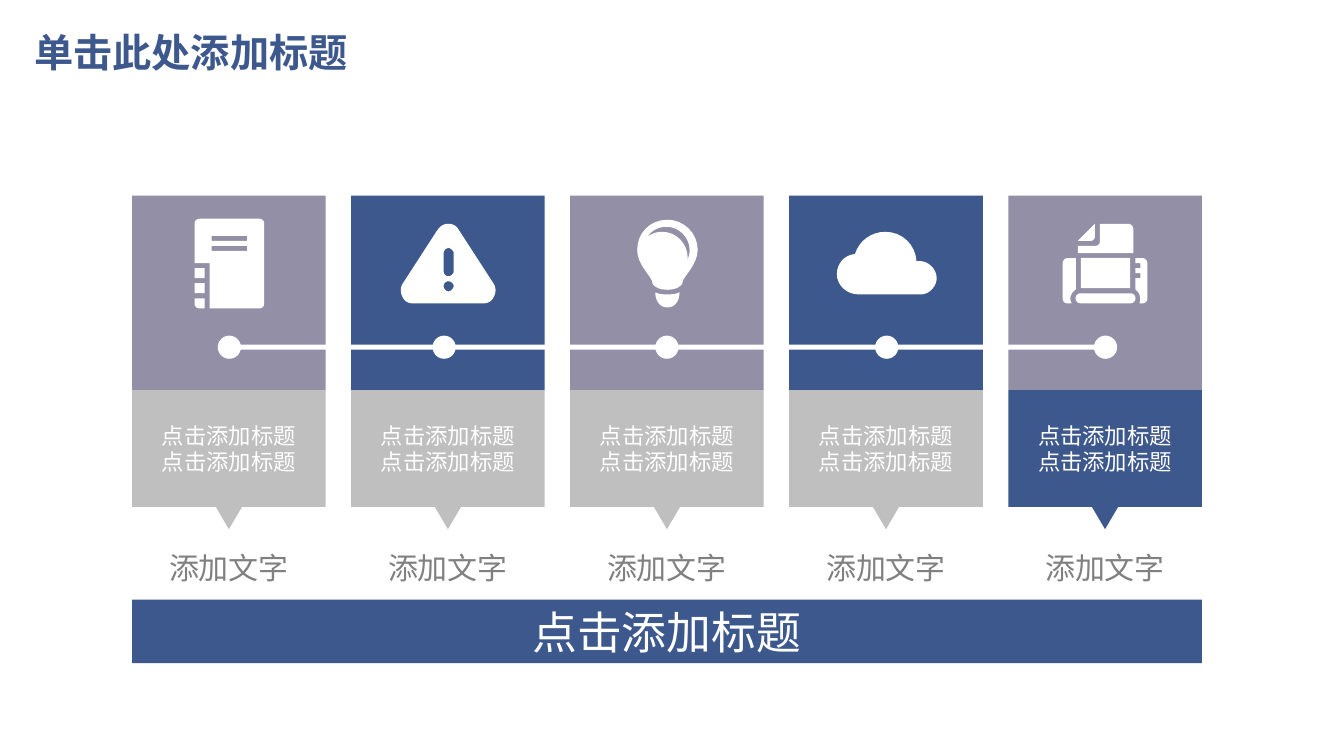
from lxml.etree import SubElement
from pptx import Presentation
from pptx.dml.color import RGBColor
from pptx.enum.shapes import MSO_SHAPE as SHAPE
from pptx.enum.text import MSO_ANCHOR as ANCHOR, MSO_AUTO_SIZE as AUTO_SIZE, PP_ALIGN as ALIGN
from pptx.oxml.ns import qn
from pptx.util import Pt

PX = 9144
COLORS = {"blue": "3D588C", "mauve": "938FA7", "silver": "BFBFBF", "gray": "808080", "white": "FFFFFF"}
CJK = "Noto Sans CJK SC"
LEFT, CARD_W, BANNER_W = 131, 192, 1061
CARD_TOP, CARD_H, CAPTION_TOP, CAPTION_H = 194, 193, 387, 116
PITCH = (BANNER_W - CARD_W) / 4
CARD_COLORS = ["mauve", "blue", "mauve", "blue", "mauve"]
CAPTION_COLORS = ["silver"] * 4 + ["blue"]
DOT_LEFTS = [216, 429, 650, 868, 1085]

NOTEBOOK = [
    [[(203, 306), (198, 306), (195, 306, 193, 304, 193, 301), (193, 296), (203, 296)]],
    [[(198, 217), (257, 217), (260, 217, 262, 219, 262, 222), (262, 301),
      (262, 304, 260, 306, 257, 306), (208, 306), (208, 261), (193, 261), (193, 222),
      (193, 219, 195, 217, 198, 217)],
     [(210, 249), (245, 249), (245, 244), (210, 244)],
     [(210, 239), (245, 239), (245, 234), (210, 234)]],
]
WARNING = [
    [[(434, 228), (437, 224, 440, 222, 445, 222), (449, 222, 453, 224, 455, 228), (490, 282),
      (492, 286, 492, 290, 490, 294), (488, 299, 484, 301, 479, 301), (410, 301),
      (405, 301, 401, 299, 399, 294), (397, 290, 397, 286, 399, 282)],
     [(445, 289), (447, 289, 450, 286, 450, 284), (450, 281, 447, 279, 445, 279),
      (442, 279, 440, 281, 440, 284), (440, 286, 442, 289, 445, 289)],
     [(440, 269), (440, 272, 442, 274, 445, 274), (447, 274, 450, 272, 450, 269), (450, 251),
      (450, 249, 447, 246, 445, 246), (442, 246, 440, 249, 440, 251)]],
]
BULB = [
    [[(650, 290), (654, 292, 657, 292, 662, 292), (666, 292, 670, 292, 674, 290),
      (674, 298, 670, 305, 662, 305), (654, 305, 650, 298, 650, 290)]],
    [[(662, 218), (678, 218, 692, 231, 692, 248), (692, 263, 677, 275, 677, 280),
      (677, 282, 675, 284, 671, 286), (665, 288, 659, 288, 653, 286),
      (649, 284, 647, 282, 647, 280), (647, 275, 632, 263, 632, 248),
      (632, 231, 645, 218, 662, 218)],
     [(657, 230), (671, 230, 682, 242, 682, 255), (682, 258), (683, 255, 684, 252, 684, 248),
      (684, 236, 674, 225, 661, 225), (653, 225, 646, 229, 642, 235),
      (646, 232, 651, 230, 657, 230)]],
]
CLOUD = [
    [[(848, 252), (852, 239, 864, 230, 878, 230), (895, 230, 908, 243, 909, 259),
      (912, 259), (921, 259, 929, 267, 929, 276), (929, 283, 923, 291, 915, 292), (851, 292),
      (840, 292, 830, 283, 830, 272), (830, 262, 837, 253, 848, 252)]],
]
PRINTER = [
    [[(1059, 256), (1067, 256), (1067, 287), (1062, 291, 1060, 296, 1063, 301), (1059, 301),
      (1056, 301, 1054, 299, 1054, 296), (1054, 261), (1054, 259, 1056, 256, 1059, 256)]],
    [[(1072, 291), (1121, 291), (1128, 291, 1128, 301, 1121, 301), (1072, 301),
      (1065, 301, 1065, 291, 1072, 291)]],
    [[(1126, 287), (1126, 276), (1131, 276), (1131, 271), (1126, 271), (1126, 266), (1131, 266),
      (1131, 261), (1126, 261), (1126, 256), (1133, 256), (1136, 256, 1138, 259, 1138, 261),
      (1138, 296), (1138, 299, 1136, 301, 1133, 301), (1130, 301),
      (1132, 296, 1131, 291, 1126, 287)]],
    [[(1082, 239), (1069, 239), (1086, 222), (1086, 234), (1086, 237, 1084, 239, 1082, 239)]],
    [[(1069, 244), (1086, 244), (1089, 244, 1091, 242, 1091, 239), (1091, 222), (1119, 222),
      (1121, 222, 1124, 224, 1124, 227), (1124, 251), (1069, 251)]],
]
ICON_BLOCKS = [(193, 266, 10, 10), (193, 281, 10, 10), (1072, 256, 49, 30)]


def flatten(contour, steps=8):
    """Turn a contour of points and cubic curves into plain points."""
    points = []
    for node in contour:
        if len(node) == 2:
            points.append(node)
            continue
        start, first, second, end = points[-1], node[:2], node[2:4], node[4:]
        for step in range(1, steps + 1):
            t = step / steps
            weights = ((1 - t) ** 3, 3 * t * (1 - t) ** 2, 3 * t * t * (1 - t), t ** 3)
            points.append(tuple(sum(w * p[axis] for w, p in zip(weights, (start, first, second, end)))
                                for axis in (0, 1)))
    return [(round(x * PX), round(y * PX)) for x, y in points]


class Deck:
    """Hold the style and the current slide."""

    def __init__(self):
        self.prs = Presentation()
        self.prs.slide_width, self.prs.slide_height = self.emu(1333, 750)
        self.slide = self.prs.slides.add_slide(self.prs.slide_layouts[5])

    def emu(self, *lengths):
        return [round(length * PX) for length in lengths]

    def paint(self, shape, color):
        shape.shadow.inherit = False
        shape.fill.solid()
        shape.fill.fore_color.rgb = RGBColor.from_string(COLORS[color])
        shape.line.fill.background()

    def put_text(self, shape, text, size, color, align=ALIGN.CENTER, font=CJK, bold=False, spacing=None):
        frame = shape.text_frame
        frame.text = text
        frame.vertical_anchor = ANCHOR.MIDDLE
        for paragraph in frame.paragraphs:
            paragraph.alignment = align
            paragraph.line_spacing = spacing
            for run in paragraph.runs:
                run.font.size, run.font.bold, run.font.name = Pt(size), bold, font
                run.font.color.rgb = RGBColor.from_string(COLORS[color])
                SubElement(run.font._element, qn("a:ea"), typeface=font)

    def title(self, text, *box):
        heading = self.slide.shapes.title
        heading.left, heading.top, heading.width, heading.height = self.emu(*box)
        heading.text_frame.auto_size = AUTO_SIZE.NONE
        self.put_text(heading, text, 28, "blue", ALIGN.LEFT, "Montserrat", True, 0.9)

    def block(self, color, *box, kind=SHAPE.RECTANGLE):
        shape = self.slide.shapes.add_shape(kind, *self.emu(*box))
        self.paint(shape, color)
        return shape

    def label(self, text, *box):
        label = self.slide.shapes.add_textbox(*self.emu(*box))
        label.text_frame.word_wrap = False
        self.put_text(label, text, 21.4, "gray")

    def outline(self, contours):
        first, *holes = [flatten(contour) for contour in contours]
        builder = self.slide.shapes.build_freeform(*first[0], scale=1.0)
        builder.add_line_segments(first[1:], close=True)
        for hole in holes:
            builder.move_to(*hole[0])
            builder.add_line_segments(hole[1:], close=True)
        self.paint(builder.convert_to_shape(), "white")


def main():
    deck = Deck()
    deck.title("单击此处添加标题", 24, 24, 1150, 60)
    for i, (card_color, caption_color) in enumerate(zip(CARD_COLORS, CAPTION_COLORS)):
        left = LEFT + i * PITCH
        center = left + CARD_W / 2
        deck.block(card_color, left, CARD_TOP, CARD_W, CARD_H)
        caption = deck.block(caption_color, left, CAPTION_TOP, CARD_W, CAPTION_H)
        deck.put_text(caption, "点击添加标题\n点击添加标题", 16, "white")
        pointer = deck.block(caption_color, center - 13.5, 502, 27, 23, kind=SHAPE.ISOSCELES_TRIANGLE)
        pointer.rotation = 180
        deck.label("添加文字", center - 70, 540, 140, 46)
    for icon in (NOTEBOOK, WARNING, BULB, CLOUD, PRINTER):
        for contours in icon:
            deck.outline(contours)
    for box in ICON_BLOCKS:
        deck.block("white", *box)
    for dot_left in DOT_LEFTS:
        deck.block("white", dot_left, 333, 23, 23, kind=SHAPE.OVAL)
    deck.block("white", 220, 342, BANNER_W - CARD_W, 5)
    banner = deck.block("blue", LEFT, 595, BANNER_W, 63)
    deck.put_text(banner, "点击添加标题", 32, "white")
    deck.prs.save("out.pptx")


if __name__ == "__main__":
    main()
